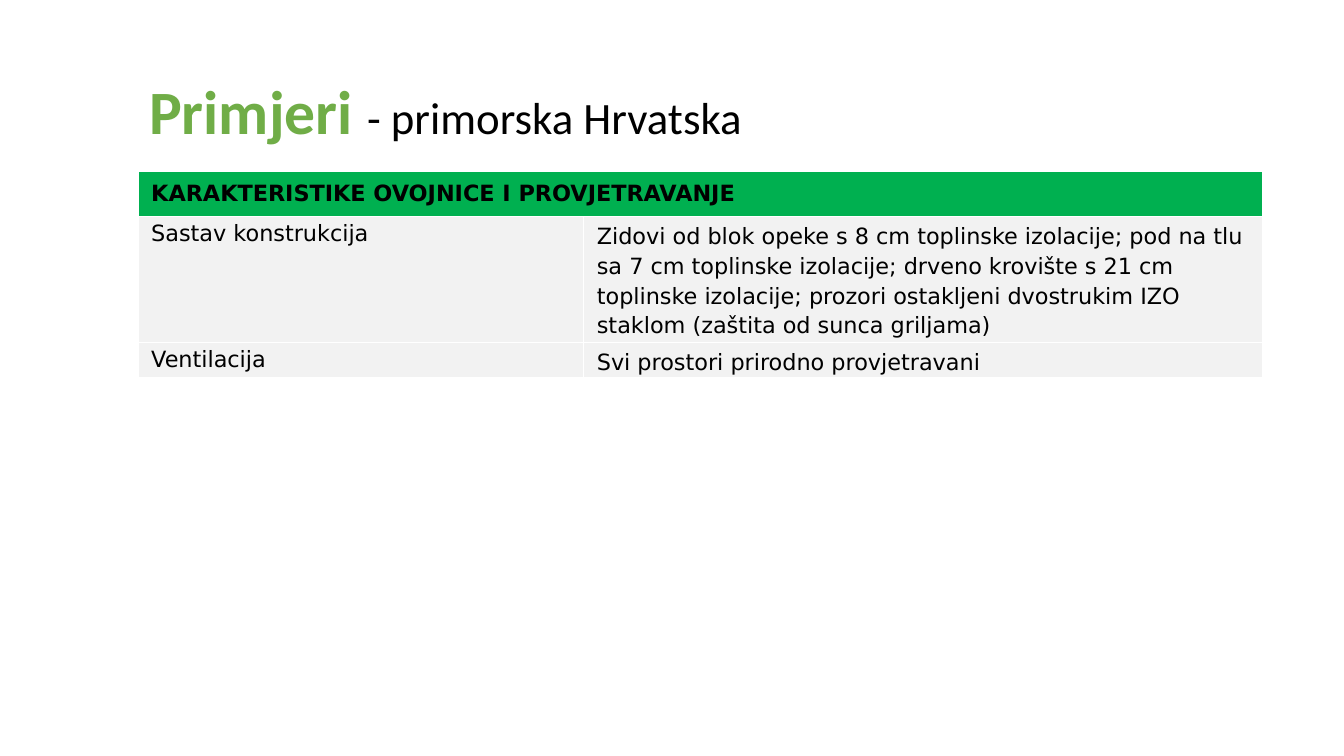
from pptx import Presentation
from pptx.dml.color import RGBColor
from pptx.enum.text import MSO_ANCHOR, MSO_AUTO_SIZE, PP_ALIGN
from pptx.util import Inches, Pt

TITLE_BOX = (1.38, 0.67, 11.19, 0.75)
TABLE_BOX = (1.37, 1.7, 11.15, 2.05)
COLUMN_WIDTHS = (4.42, 6.73)
ROW_HEIGHTS = (0.45, 1.25, 0.35)

HEADING = "KARAKTERISTIKE OVOJNICE I PROVJETRAVANJE"
FEATURES = [
    ("Sastav konstrukcija",
     "Zidovi od blok opeke s 8 cm toplinske izolacije; pod na tlu sa 7 cm "
     "toplinske izolacije; drveno krovište s 21 cm toplinske izolacije; "
     "prozori ostakljeni dvostrukim IZO staklom (zaštita od sunca griljama)"),
    ("Ventilacija", "Svi prostori prirodno provjetravani"),
]


def color(hex_string):
    return RGBColor.from_string(hex_string)


def add_run(paragraph, text, font_name, size, hex_color="000000", bold=False):
    run = paragraph.add_run()
    run.text = text
    run.font.name = font_name
    run.font.size = Pt(size)
    run.font.bold = bold
    run.font.color.rgb = color(hex_color)


def fill_title(title, box):
    title.left, title.top, title.width, title.height = map(Inches, box)
    frame = title.text_frame
    frame.auto_size = MSO_AUTO_SIZE.NONE
    frame.word_wrap = True
    frame.vertical_anchor = MSO_ANCHOR.TOP
    paragraph = frame.paragraphs[0]
    paragraph.alignment = PP_ALIGN.LEFT
    add_run(paragraph, "Primjeri ", "Calibri", 44, "70AD47", bold=True)
    add_run(paragraph, "- primorska Hrvatska", "Calibri", 32)


def fill_cell(cell, text, fill, margin=0, bold=False, anchor=MSO_ANCHOR.TOP):
    cell.fill.solid()
    cell.fill.fore_color.rgb = color(fill)
    cell.margin_left = cell.margin_right = Inches(0.13)
    cell.margin_top = cell.margin_bottom = Inches(margin)
    cell.vertical_anchor = anchor
    paragraph = cell.text_frame.paragraphs[0]
    paragraph.line_spacing = 1.15
    paragraph.space_after = Pt(10)
    add_run(paragraph, text, "DejaVu Sans", 16, bold=bold)


def add_feature_table(slide, box):
    table = slide.shapes.add_table(
        len(ROW_HEIGHTS), len(COLUMN_WIDTHS), *map(Inches, box)).table
    table.first_row = table.horz_banding = False
    for column, width in zip(table.columns, COLUMN_WIDTHS):
        column.width = Inches(width)
    for row, height in zip(table.rows, ROW_HEIGHTS):
        row.height = Inches(height)

    # Heading across both columns
    table.cell(0, 0).merge(table.cell(0, 1))
    fill_cell(table.cell(0, 0), HEADING, "00B050", margin=0.06, bold=True)

    # Feature names and descriptions
    for row, (name, description) in enumerate(FEATURES, start=1):
        fill_cell(table.cell(row, 0), name, "F2F2F2")
        fill_cell(table.cell(row, 1), description, "F2F2F2",
                  anchor=MSO_ANCHOR.MIDDLE)


def main():
    presentation = Presentation()
    presentation.slide_width = Inches(13.33)
    presentation.slide_height = Inches(7.5)
    slide = presentation.slides.add_slide(presentation.slide_layouts[5])
    fill_title(slide.shapes.title, TITLE_BOX)
    add_feature_table(slide, TABLE_BOX)
    presentation.save("out.pptx")


if __name__ == "__main__":
    main()
